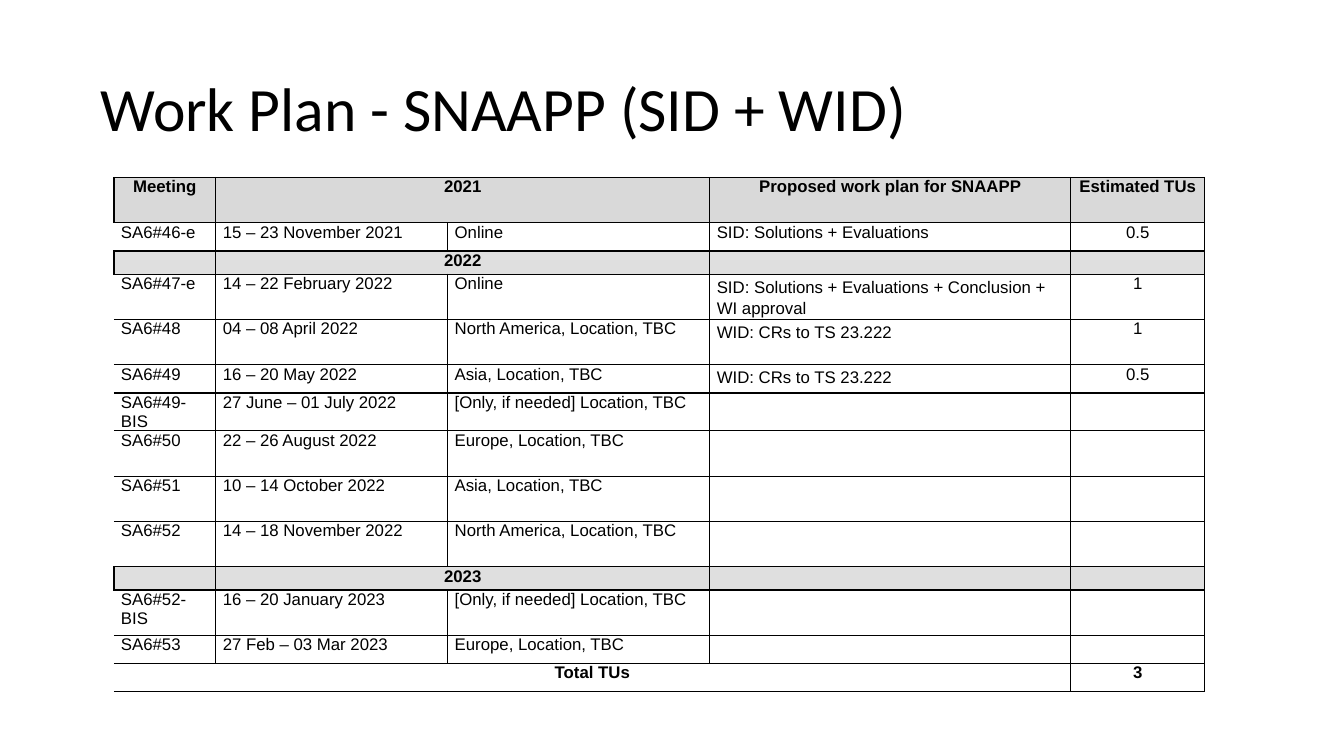
import dataclasses

import lxml.etree
import pptx
import pptx.dml.color
import pptx.enum.text
import pptx.oxml.ns
import pptx.util

Inches = pptx.util.Inches
Pt = pptx.util.Pt
Align = pptx.enum.text.PP_ALIGN


@dataclasses.dataclass(frozen=True)
class Theme:
    """Colours, fonts and type sizes of the slide."""
    ink: str = "000000"
    head: str = "D9D9D9"
    band: str = "DFDFDF"
    plain: str = "FFFFFF"
    title: str = "Calibri"
    body: str = "Arial"
    big: int = 44
    small: int = 12
    rule: int = 1


THEME = Theme()
WIDTHS = (1.01, 2.3, 2.6, 3.58, 1.33)
ROWS = (
    ("head", 0.45, "Meeting", "2021", "", "Proposed work plan for SNAAPP", "Estimated TUs"),
    ("data", 0.28, "SA6#46-e", "15 – 23 November 2021", "Online", "SID: Solutions + Evaluations", "0.5"),
    ("band", 0.23, "", "2022", "", "", ""),
    ("plan", 0.45, "SA6#47-e", "14 – 22 February 2022", "Online",
     "SID: Solutions + Evaluations + Conclusion + WI approval", "1"),
    ("plan", 0.45, "SA6#48", "04 – 08 April 2022", "North America, Location, TBC", "WID: CRs to TS 23.222", "1"),
    ("plan", 0.28, "SA6#49", "16 – 20 May 2022", "Asia, Location, TBC", "WID: CRs to TS 23.222", "0.5"),
    ("data", 0.28, "SA6#49-BIS", "27 June – 01 July 2022", "[Only, if needed] Location, TBC", "", ""),
    ("data", 0.45, "SA6#50", "22 – 26 August 2022", "Europe, Location, TBC", "", ""),
    ("data", 0.45, "SA6#51", "10 – 14 October 2022", "Asia, Location, TBC", "", ""),
    ("data", 0.45, "SA6#52", "14 – 18 November 2022", "North America, Location, TBC", "", ""),
    ("band", 0.23, "", "2023", "", "", ""),
    ("data", 0.45, "SA6#52-BIS", "16 – 20 January 2023", "[Only, if needed] Location, TBC", "", ""),
    ("data", 0.28, "SA6#53", "27 Feb – 03 Mar 2023", "Europe, Location, TBC", "", ""),
    ("total", 0.28, "Total TUs", "", "", "", "3"),
)
SPANS = {"head": (1, 2), "band": (1, 2), "total": (0, 3)}


def paint(font, name, size, bold=False):
    """Format a font in the ink colour."""
    font.name, font.size, font.bold = name, Pt(size), bold
    font.color.rgb = pptx.dml.color.RGBColor.from_string(THEME.ink)


def add_title(slide, text):
    """Place and format the slide title."""
    title = slide.shapes.title
    title.left, title.top = Inches(0.9), Inches(0.38)
    title.width, title.height = Inches(11.5), Inches(1.45)
    frame = title.text_frame
    frame.text = text
    frame.vertical_anchor = pptx.enum.text.MSO_ANCHOR.MIDDLE
    par = frame.paragraphs[0]
    par.alignment, par.line_spacing = Align.LEFT, 0.9
    paint(par.runs[0].font, THEME.title, THEME.big)


def add_rules(cell, left):
    """Draw the cell borders, the left one only on request."""
    qn = pptx.oxml.ns.qn
    props = cell._tc.get_or_add_tcPr()
    for side in "LRTB":
        line = lxml.etree.SubElement(props, qn(f"a:ln{side}"), w=str(Pt(THEME.rule)))
        if side == "L" and not left:
            lxml.etree.SubElement(line, qn("a:noFill"))
        else:
            fill = lxml.etree.SubElement(line, qn("a:solidFill"))
            lxml.etree.SubElement(fill, qn("a:srgbClr"), val=THEME.ink)


def fill_cell(cell, text, kind, col):
    """Write and format one table cell."""
    shaded = kind in ("head", "band")
    add_rules(cell, shaded or col > 0)
    cell.fill.solid()
    tint = {"head": THEME.head, "band": THEME.band}.get(kind, THEME.plain)
    cell.fill.fore_color.rgb = pptx.dml.color.RGBColor.from_string(tint)
    cell.margin_left = cell.margin_right = Inches(0.07)
    cell.margin_top = cell.margin_bottom = 0
    par = cell.text_frame.paragraphs[0]
    par.space_before = par.space_after = Pt(1)
    bold = kind in SPANS
    par.alignment = Align.CENTER if bold or col == 4 else Align.LEFT
    if kind == "plan" and col == 3:
        cell.margin_top = Inches(0.01)
        par.line_spacing = 1.15
    if text:
        par.text = text
        paint(par.runs[0].font, THEME.body, THEME.small, bold)
    else:
        end = pptx.oxml.ns.qn("a:endParaRPr")
        lxml.etree.SubElement(par._p, end, sz=str(THEME.small * 100))


def add_plan(slide):
    """Add the table of meetings and planned work."""
    frame = slide.shapes.add_table(
        len(ROWS), len(WIDTHS), Inches(1.13), Inches(1.76),
        Inches(sum(WIDTHS)), Inches(sum(row[1] for row in ROWS)))
    table = frame.table
    table.first_row = table.horz_banding = False
    for col, width in zip(table.columns, WIDTHS):
        col.width = Inches(width)
    for num, (kind, height, *texts) in enumerate(ROWS):
        table.rows[num].height = Inches(height)
        for col, text in enumerate(texts):
            fill_cell(table.cell(num, col), text, kind, col)
        if kind in SPANS:
            first, last = SPANS[kind]
            table.cell(num, first).merge(table.cell(num, last))


def main():
    """Build the work plan slide and save it."""
    deck = pptx.Presentation()
    deck.slide_width, deck.slide_height = Inches(13.33), Inches(7.5)
    slide = deck.slides.add_slide(deck.slide_layouts[5])
    add_title(slide, "Work Plan - SNAAPP (SID + WID)")
    add_plan(slide)
    deck.save("out.pptx")


if __name__ == "__main__":
    main()
